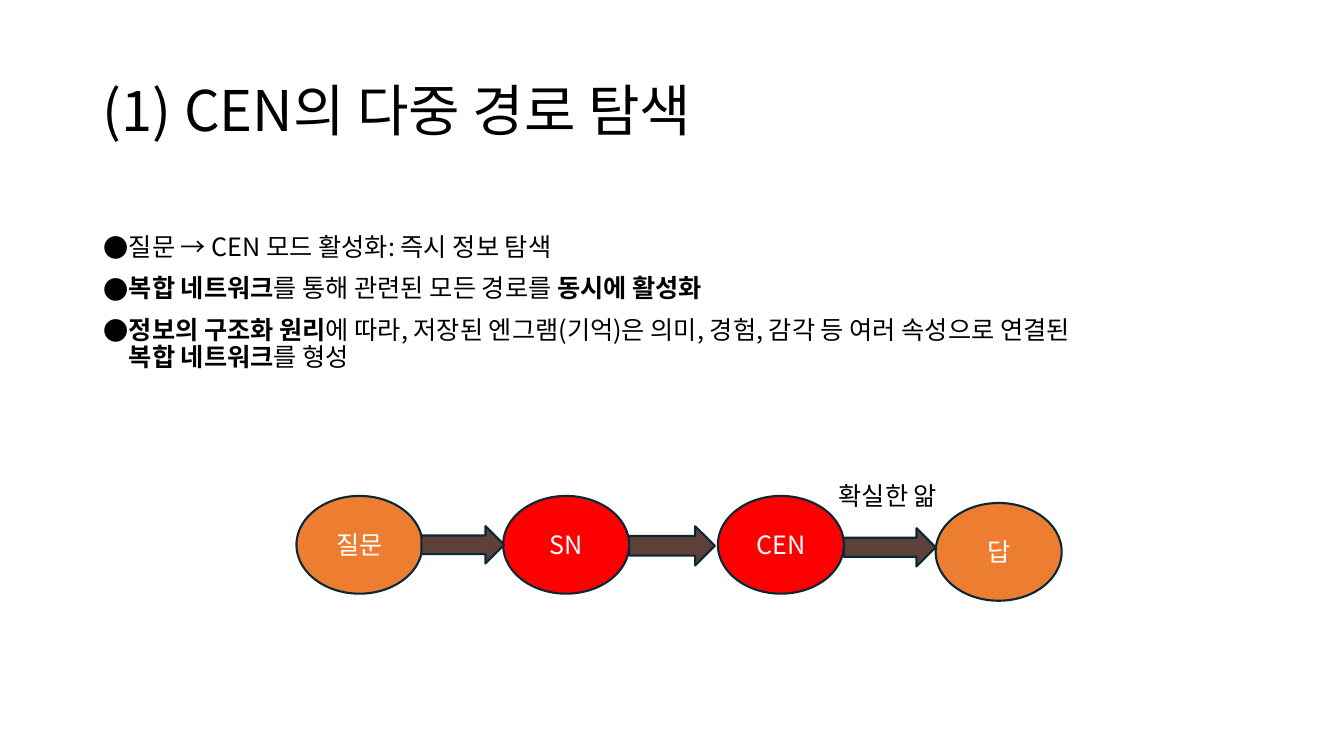
from dataclasses import dataclass

from lxml.etree import SubElement
from pptx import Presentation
from pptx.dml.color import RGBColor
from pptx.enum.shapes import MSO_SHAPE as Shape
from pptx.enum.text import MSO_ANCHOR as Anchor, PP_ALIGN as Align
from pptx.oxml.ns import qn
from pptx.util import Inches, Pt


@dataclass(frozen=True)
class Theme:
    font: str = "Noto Sans CJK KR"
    text: str = "000000"
    node_text: str = "FFFFFF"
    endpoint: str = "ED7D31"
    network: str = "FF0000"
    arrow: str = "5D4037"
    outline: str = "082836"
    title_size: int = 40
    body_size: int = 18
    outline_width: float = 1.5


THEME = Theme()

# Each bullet is a list of (text, bold) pieces; a line break is "\v"
BULLETS = [
    [("질문 → CEN 모드 활성화: 즉시 정보 탐색", False)],
    [("복합 네트워크", True), ("를 통해 관련된 모든 경로를 ", False),
     ("동시에 활성화", True)],
    [("정보의 구조화 원리", True),
     ("에 따라, 저장된 엔그램(기억)은 의미, 경험, 감각 등 여러 속성으로 연결된 \v", False),
     ("복합 네트워크", True), ("를 형성", False)],
]

# Flow nodes: label, left, top, fill
NODES = [
    ("질문", 2.94, 4.92, THEME.endpoint),
    ("SN", 4.99, 4.92, THEME.network),
    ("CEN", 7.12, 4.92, THEME.network),
    ("답", 9.28, 4.99, THEME.endpoint),
]
NODE_SIZE = (1.25, 0.97)

# Flow arrows: left, top, width, height
ARROWS = [
    (4.18, 5.22, 0.82, 0.37),
    (6.24, 5.22, 0.85, 0.39),
    (8.37, 5.24, 0.91, 0.38),
]


def style_run(run, size, color, bold=False):
    run.font.size = Pt(size)
    run.font.bold = bold
    run.font.color.rgb = RGBColor.from_string(color)
    run.font.name = THEME.font
    SubElement(run.font._element, qn("a:ea"), typeface=THEME.font)


def add_text_frame(slide, *box):
    frame = slide.shapes.add_textbox(*map(Inches, box)).text_frame
    frame.word_wrap = True
    return frame


def add_line_of_text(slide, text, box, size, anchor=Anchor.TOP, spacing=1.0):
    frame = add_text_frame(slide, *box)
    frame.vertical_anchor = anchor
    frame.text = text
    paragraph = frame.paragraphs[0]
    paragraph.line_spacing = spacing
    style_run(paragraph.runs[0], size, THEME.text)


def add_bullet_mark(paragraph):
    properties = paragraph._p.get_or_add_pPr()
    properties.set("marL", str(Inches(0.25)))
    properties.set("indent", str(-Inches(0.25)))
    color = SubElement(properties, qn("a:buClr"))
    SubElement(color, qn("a:srgbClr"), val=THEME.text)
    SubElement(properties, qn("a:buFont"), typeface=THEME.font)
    SubElement(properties, qn("a:buChar"), char="●")


def add_bullets(slide, bullets, box):
    frame = add_text_frame(slide, *box)
    for index, pieces in enumerate(bullets):
        bullet = frame.paragraphs[0] if index == 0 else frame.add_paragraph()
        bullet.line_spacing = 0.9
        bullet.space_before = Pt(10 if index else 0)
        add_bullet_mark(bullet)
        for text, bold in pieces:
            piece = bullet.add_run()
            piece.text = text.rstrip("\v")
            style_run(piece, THEME.body_size, THEME.text, bold)
            if text.endswith("\v"):
                bullet.add_line_break()


def add_outlined_shape(slide, kind, box, fill):
    shape = slide.shapes.add_shape(kind, *map(Inches, box))
    shape.shadow.inherit = False
    shape.fill.solid()
    shape.fill.fore_color.rgb = RGBColor.from_string(fill)
    shape.line.color.rgb = RGBColor.from_string(THEME.outline)
    shape.line.width = Pt(THEME.outline_width)
    return shape


def add_node(slide, label, left, top, fill):
    node = add_outlined_shape(slide, Shape.OVAL, (left, top, *NODE_SIZE), fill)
    frame = node.text_frame
    frame.vertical_anchor = Anchor.MIDDLE
    frame.text = label
    frame.paragraphs[0].alignment = Align.CENTER
    style_run(frame.paragraphs[0].runs[0], THEME.body_size, THEME.node_text)


def main():
    deck = Presentation()
    deck.slide_width, deck.slide_height = Inches(13.33), Inches(7.5)
    slide = deck.slides.add_slide(deck.slide_layouts[6])

    # Title and explanation
    add_line_of_text(slide, "(1) CEN의 다중 경로 탐색", (0.92, 0.4, 11.5, 1.45),
                     THEME.title_size, Anchor.MIDDLE, 0.9)
    add_bullets(slide, BULLETS, (0.93, 2.28, 11.52, 2.31))

    # Flow from question to answer
    for node in NODES:
        add_node(slide, *node)
    for box in ARROWS:
        add_outlined_shape(slide, Shape.RIGHT_ARROW, box, THEME.arrow)
    add_line_of_text(slide, "확실한 앎", (8.22, 4.72, 2.47, 0.4), THEME.body_size)

    deck.save("out.pptx")


if __name__ == "__main__":
    main()
